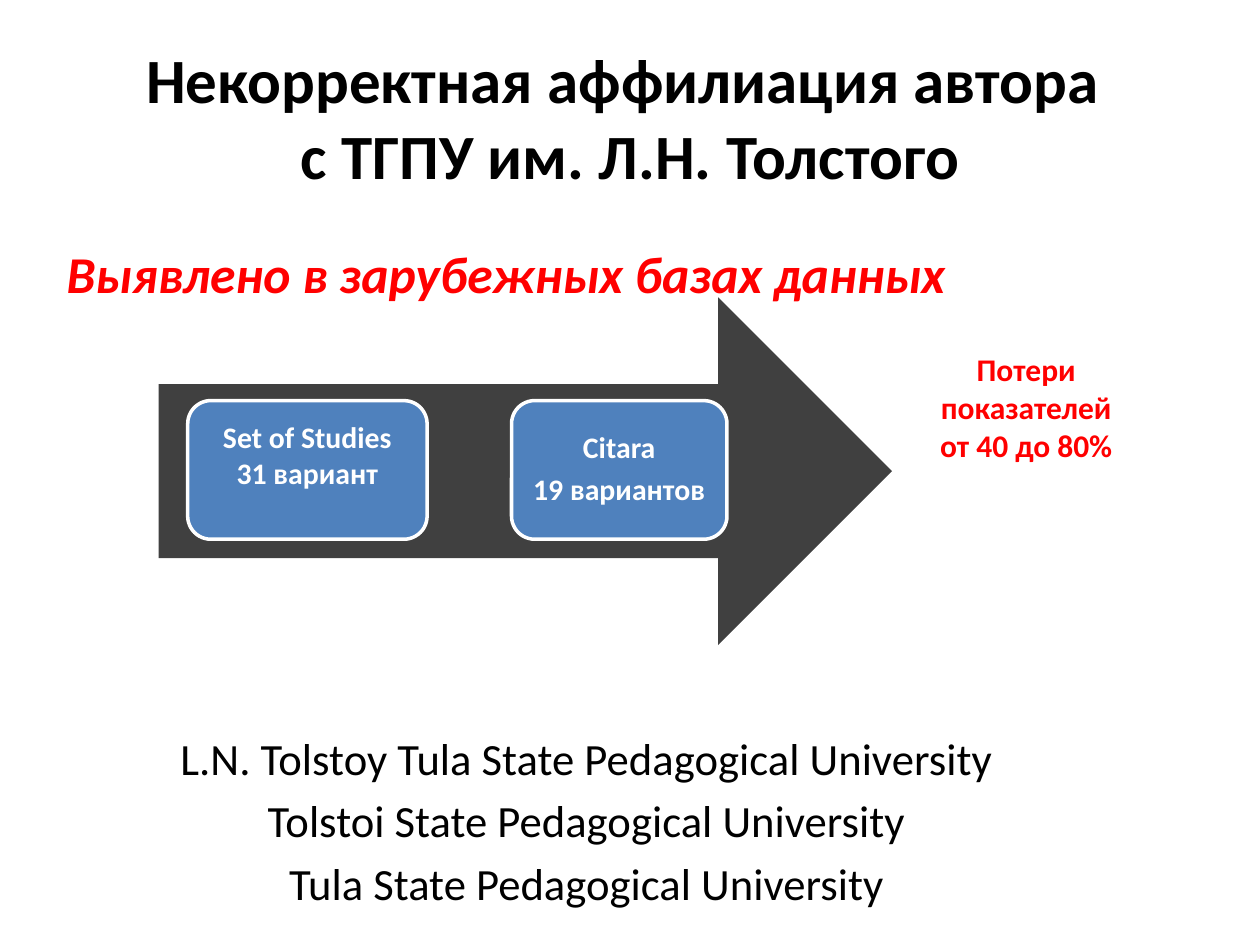
"""Build the slide on incorrect author affiliation."""
from dataclasses import dataclass

import pptx
import pptx.dml.color
import pptx.enum.shapes
import pptx.enum.text
import pptx.util

Inches = pptx.util.Inches
Pt = pptx.util.Pt
RGB = pptx.dml.color.RGBColor
SHAPE = pptx.enum.shapes.MSO_SHAPE
ALIGN = pptx.enum.text.PP_ALIGN
ANCHOR = pptx.enum.text.MSO_ANCHOR


@dataclass(frozen=True)
class Theme:
    """Hold the font, colours and type sizes."""
    font: str = "Calibri"
    ink: str = "000000"
    alert: str = "FF0000"
    arrow: str = "404040"
    card: str = "4F81BD"
    light: str = "FFFFFF"
    title: float = 36
    heading: float = 29.5
    names: float = 25.5
    loss: float = 18
    label: float = 17


T = Theme()


def write(tf, lines, size, color, bold=False, italic=False, align=ALIGN.CENTER,
          before=0, after=0, spacing=1.0):
    """Write one paragraph per line and format its runs."""
    tf.word_wrap = True
    for i, line in enumerate(lines):
        p = tf.add_paragraph() if i else tf.paragraphs[0]
        p.text = line
        p.alignment = align
        p.line_spacing = spacing
        p.space_before = Pt(before if i else 0)
        p.space_after = Pt(after)
        for r in p.runs:
            r.font.name = T.font
            r.font.size = Pt(size)
            r.font.bold = bold
            r.font.italic = italic
            r.font.color.rgb = RGB.from_string(color)


def add_text(s, box, lines, size, color, anchor=ANCHOR.TOP, **style):
    """Add a text box."""
    tf = s.shapes.add_textbox(*map(Inches, box)).text_frame
    tf.vertical_anchor = anchor
    write(tf, lines, size, color, **style)


def add_block(s, kind, box, fill, line=None):
    """Add a flat filled shape with an optional outline."""
    sp = s.shapes.add_shape(kind, *map(Inches, box))
    sp.shadow.inherit = False
    sp.fill.solid()
    sp.fill.fore_color.rgb = RGB.from_string(fill)
    if line:
        sp.line.color.rgb = RGB.from_string(line)
        sp.line.width = Pt(2)
    else:
        sp.line.fill.background()
    return sp


def add_card(s, left, width, lines, bottom=0.07, **style):
    """Add a rounded card with its database label."""
    sp = add_block(s, SHAPE.ROUNDED_RECTANGLE, (left, 3.18, width, 1.1), T.card, T.light)
    tf = sp.text_frame
    tf.margin_left = tf.margin_right = tf.margin_top = Inches(0.07)
    tf.margin_bottom = Inches(bottom)
    tf.vertical_anchor = ANCHOR.MIDDLE
    write(tf, lines, T.label, T.light, bold=True, **style)


def main():
    """Build and save the slide."""
    prs = pptx.Presentation()
    prs.slide_width, prs.slide_height = Inches(10), Inches(7.5)
    s = prs.slides.add_slide(prs.slide_layouts[6])

    add_text(s, (0.5, 0.3, 9, 1.25),
             ["Некорректная аффилиация автора \vс ТГПУ им. Л.Н. Толстого"],
             T.title, T.ink, ANCHOR.MIDDLE, bold=True)
    add_text(s, (0.43, 1.87, 8.33, 0.6), ["Выявлено в зарубежных базах данных"],
             T.heading, T.alert, bold=True, italic=True, align=ALIGN.LEFT)
    add_text(s, (0.55, 5.75, 8.21, 1.55),
             ["L.N. Tolstoy Tula State Pedagogical University",
              "Tolstoi State Pedagogical University",
              "Tula State Pedagogical University"],
             T.names, T.ink, before=5.2)

    add_block(s, SHAPE.RIGHT_ARROW, (1.26, 2.36, 5.82, 2.76), T.arrow)
    add_card(s, 1.49, 1.9, ["Set of Studies", "31 вариант"], bottom=0.31)
    add_card(s, 4.06, 1.71, ["Citara", "19 вариантов"], after=6, spacing=0.9)
    add_text(s, (7.28, 2.73, 1.73, 1.01), ["Потери показателей от 40 до 80%"],
             T.loss, T.alert, bold=True)

    prs.save("out.pptx")


if __name__ == "__main__":
    main()
